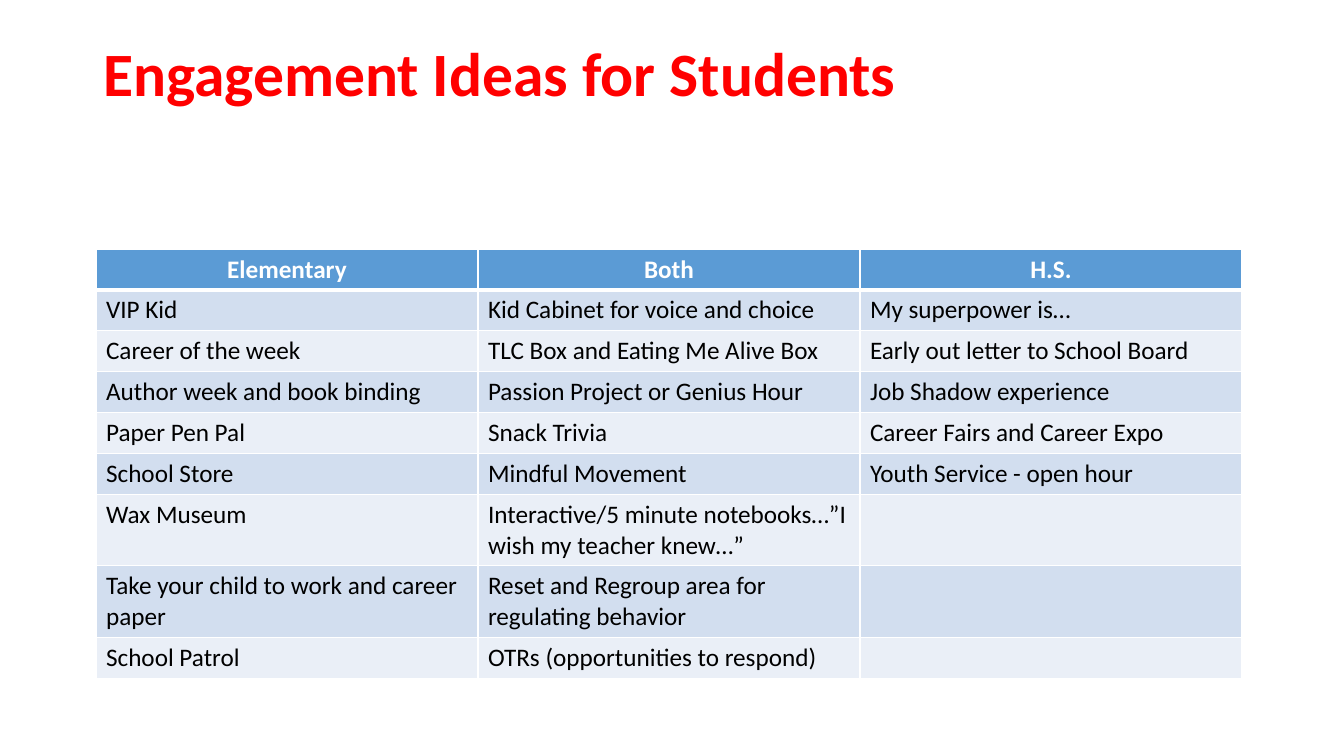
from lxml.etree import SubElement
from pptx import Presentation
from pptx.dml.color import RGBColor
from pptx.enum.text import MSO_ANCHOR, PP_ALIGN
from pptx.oxml.ns import qn
from pptx.util import Emu, Pt

COLORS = {
    "title": "FF0000",
    "header": "5B9BD5",
    "odd": "D2DEEF",
    "even": "EAEFF7",
    "white": "FFFFFF",
    "text": "000000",
}
FONT = "Calibri"
COLUMN_WIDTH = 382
LINE_ROW, TWO_LINE_ROW = 40, 70
TWO_LINE_ROWS = (6, 7)
IDEAS = [
    ("Elementary", "Both", "H.S."),
    ("VIP Kid", "Kid Cabinet for voice and choice", "My superpower is…"),
    ("Career of the week", "TLC Box and Eating Me Alive Box", "Early out letter to School Board"),
    ("Author week and book binding", "Passion Project or Genius Hour", "Job Shadow experience"),
    ("Paper Pen Pal", "Snack Trivia", "Career Fairs and Career Expo"),
    ("School Store", "Mindful Movement", "Youth Service - open hour"),
    ("Wax Museum", "Interactive/5 minute notebooks…”I wish my teacher knew…”", ""),
    ("Take your child to work and career paper", "Reset and Regroup area for regulating behavior", ""),
    ("School Patrol", "OTRs (opportunities to respond)", ""),
]


def px(length):
    """Turn pixels into EMU."""
    return Emu(round(length * 914400 / 100.8))


def add_span(para, text, size, color, bold=False):
    """Add one formatted run to a paragraph."""
    span = para.add_run()
    span.text = text
    span.font.name = FONT
    span.font.size = Pt(size)
    span.font.bold = bold
    span.font.color.rgb = RGBColor.from_string(COLORS[color])


def add_title(page, text):
    """Place and fill the title placeholder."""
    box = page.shapes.title
    box.left, box.top, box.width, box.height = px(93), px(38), px(1159), px(146)
    box.text_frame.word_wrap = True
    box.text_frame.vertical_anchor = MSO_ANCHOR.TOP
    para = box.text_frame.paragraphs[0]
    para.alignment = PP_ALIGN.LEFT
    para.line_spacing = 0.9
    add_span(para, text, 44, "title", bold=True)


def set_borders(cell, top, bottom):
    """Draw white borders with the given top and bottom widths in points."""
    properties = cell._tc.get_or_add_tcPr()
    for side, width in (("L", 1), ("R", 1), ("T", top), ("B", bottom)):
        line = SubElement(properties, qn(f"a:ln{side}"), w=str(Pt(width)))
        fill = SubElement(line, qn("a:solidFill"))
        SubElement(fill, qn("a:srgbClr"), val=COLORS["white"])


def fill_cell(cell, text, row):
    """Write and format one cell according to its row."""
    header = row == 0
    set_borders(cell, 3 if row == 1 else 1, 3 if header else 1)
    fill = "header" if header else "odd" if row % 2 else "even"
    cell.fill.solid()
    cell.fill.fore_color.rgb = RGBColor.from_string(COLORS[fill])
    if text:
        para = cell.text_frame.paragraphs[0]
        para.alignment = PP_ALIGN.CENTER if header else PP_ALIGN.LEFT
        add_span(para, text, 18, "white" if header else "text", bold=header)


def add_ideas_table(page, left, top):
    """Add the table of ideas by school level."""
    heights = [TWO_LINE_ROW if row in TWO_LINE_ROWS else LINE_ROW for row in range(len(IDEAS))]
    columns = len(IDEAS[0])
    frame = page.shapes.add_table(
        len(IDEAS), columns, px(left), px(top), px(columns * COLUMN_WIDTH), px(sum(heights))
    )
    table = frame.table
    for column in table.columns:
        column.width = px(COLUMN_WIDTH)
    for row, (height, texts) in enumerate(zip(heights, IDEAS)):
        table.rows[row].height = px(height)
        for column, text in enumerate(texts):
            fill_cell(table.cell(row, column), text, row)


def main():
    """Build and save the slide."""
    deck = Presentation()
    deck.slide_width, deck.slide_height = px(1344), px(756)
    page = deck.slides.add_slide(deck.slide_layouts[5])
    add_ideas_table(page, 96, 249)
    add_title(page, "Engagement Ideas for Students")
    deck.save("out.pptx")


if __name__ == "__main__":
    main()
